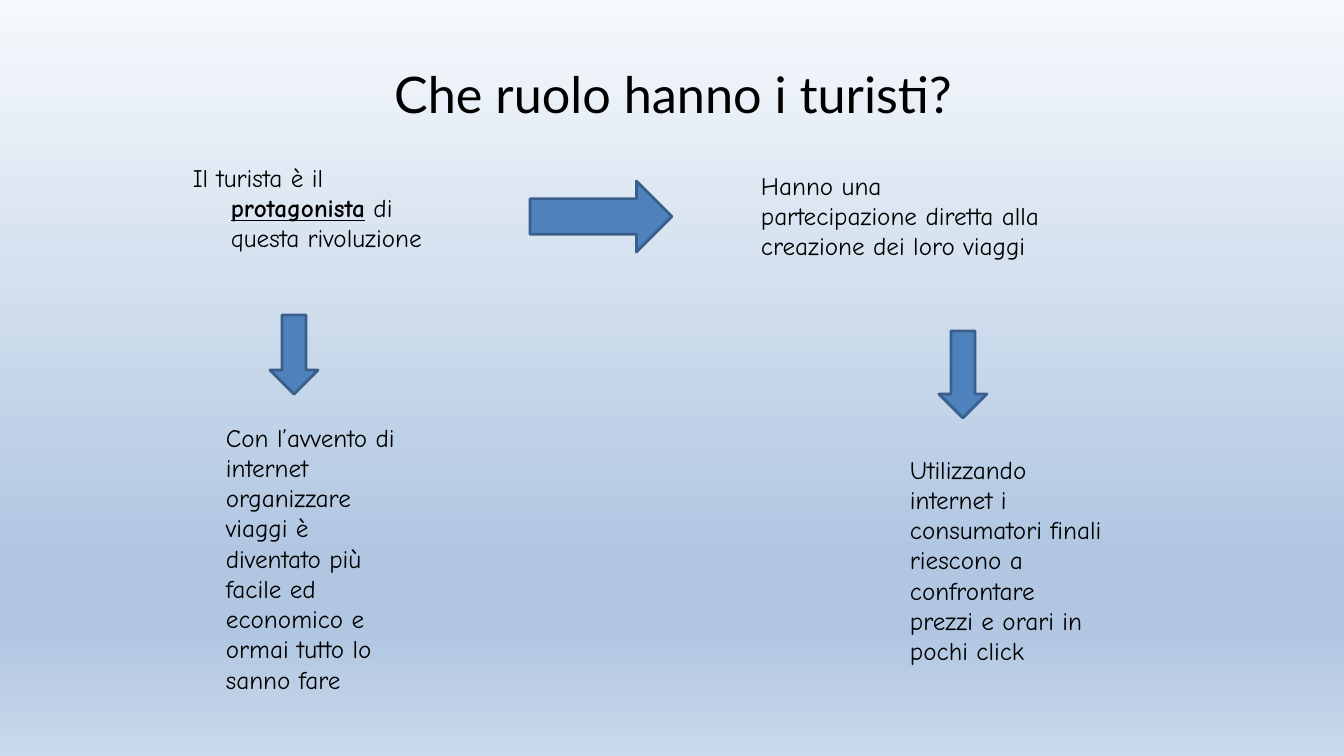
from copy import deepcopy

from pptx import Presentation
from pptx import util as u
from pptx.dml.color import RGBColor
from pptx.enum import shapes, text

PX = 914400 / 100.8
COLORS = {
    "text": "000000",
    "arrow": "4F81BD",
    "arrow_line": "3A5F8C",
    "sky_top": "F6F9FC",
    "sky_deep": "B0C6E1",
    "sky_low": "CAD9EB",
}


def px(n):
    return u.Emu(round(n * PX))


def rgb(name):
    return RGBColor.from_string(COLORS[name])


class Deck:
    body_font, title_font = "Comic Neue", "Lato"
    body_size, title_size = 18, 36

    def __init__(self, width, height):
        self.prs = Presentation()
        self.prs.slide_width, self.prs.slide_height = px(width), px(height)
        self.slide = self.prs.slides.add_slide(self.prs.slide_layouts[6])

    def background(self, stops):
        """Fill the slide from top to bottom with (position, colour) stops."""
        fill = self.slide.background.fill
        fill.gradient()
        fill.gradient_angle = 270
        gs_list = self.slide.element.xpath(".//p:bg//a:gsLst")[0]
        while len(gs_list) < len(stops):
            gs_list.append(deepcopy(gs_list[0]))
        for stop, (position, color) in zip(fill.gradient_stops, stops):
            stop.position = position
            stop.color.rgb = rgb(color)

    def textbox(self, box, runs, hanging=0):
        """Add one paragraph of (words, emphasised) runs."""
        tf = self.slide.shapes.add_textbox(*map(px, box)).text_frame
        tf.word_wrap = True
        p = tf.paragraphs[0]
        p.font.name, p.font.size = self.body_font, u.Pt(self.body_size)
        p.font.color.rgb = rgb("text")
        for words, emphasised in runs:
            r = p.add_run()
            r.text = words
            if emphasised:
                r.font.bold = r.font.underline = True
        if hanging:
            pPr = p._p.get_or_add_pPr()
            pPr.set("marL", str(px(hanging)))
            pPr.set("indent", str(-px(hanging)))
        return tf

    def title(self, box, words):
        tf = self.textbox(box, [(words, False)])
        tf.vertical_anchor = text.MSO_ANCHOR.MIDDLE
        p = tf.paragraphs[0]
        p.alignment = text.PP_ALIGN.CENTER
        p.font.name, p.font.size = self.title_font, u.Pt(self.title_size)

    def arrow(self, kind, box):
        sp = self.slide.shapes.add_shape(kind, *map(px, box))
        sp.shadow.inherit = False
        sp.fill.solid()
        sp.fill.fore_color.rgb = rgb("arrow")
        sp.line.color.rgb = rgb("arrow_line")
        sp.line.width = u.Pt(2)


def main():
    deck = Deck(1344, 756)
    deck.background([(0, "sky_top"), (0.74, "sky_deep"),
                     (0.83, "sky_deep"), (1, "sky_low")])
    deck.title((68, 30, 1210, 126), "Che ruolo hanno i turisti?")

    deck.textbox((183, 157, 280, 190),
                 [("Il turista è il ", False), ("protagonista", True),
                  (" di questa rivoluzione", False)], hanging=38)
    for box, words in [
        ((751, 165, 299, 132),
         "Hanno una partecipazione diretta alla creazione dei loro viaggi"),
        ((216, 417, 190, 285),
         "Con l’avvento di internet organizzare viaggi è diventato più "
         "facile ed economico e ormai tutto lo sanno fare"),
        ((900, 449, 213, 224),
         "Utilizzando internet i consumatori finali riescono a "
         "confrontare prezzi e orari in pochi click"),
    ]:
        deck.textbox(box, [(words, False)])

    deck.arrow(shapes.MSO_SHAPE.RIGHT_ARROW, (530, 181, 142, 71))
    deck.arrow(shapes.MSO_SHAPE.DOWN_ARROW, (270, 315, 48, 79))
    deck.arrow(shapes.MSO_SHAPE.DOWN_ARROW, (939, 331, 48, 87))
    deck.prs.save("out.pptx")


if __name__ == "__main__":
    main()
